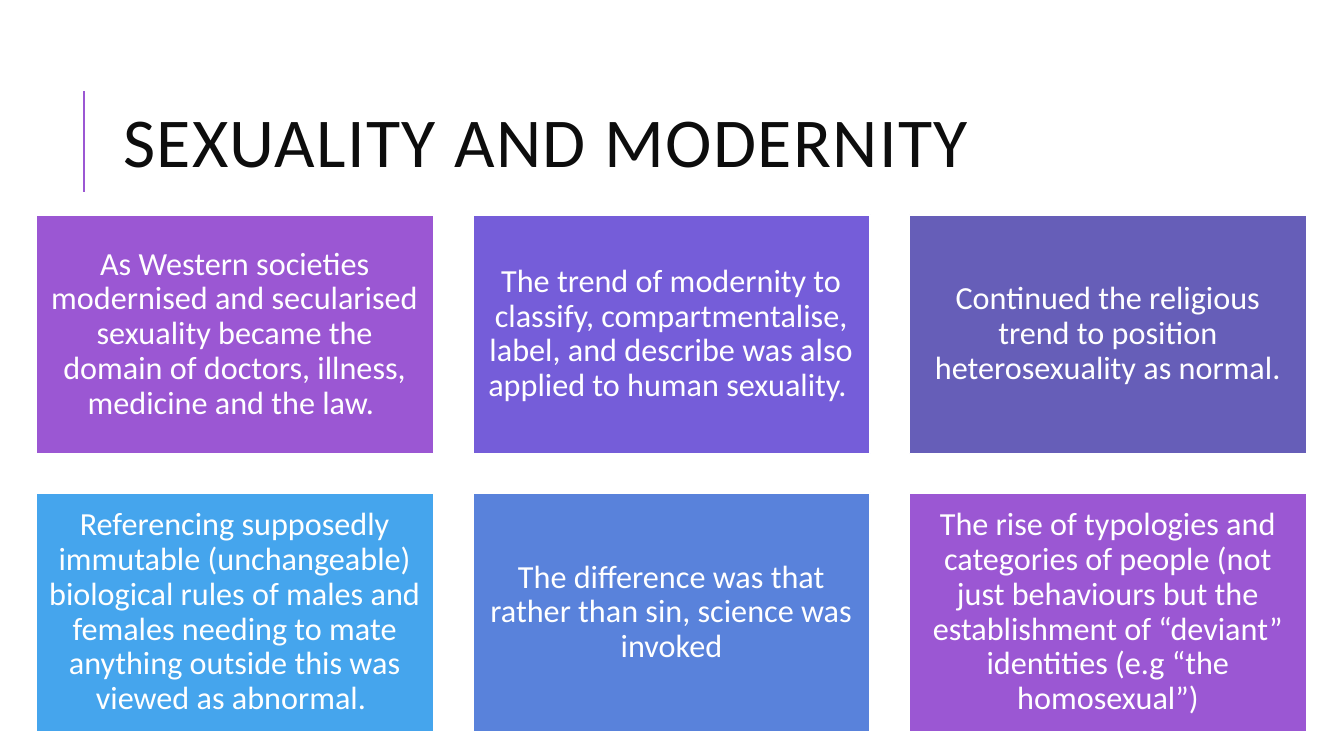
from lxml.etree import SubElement
from pptx import Presentation
from pptx.dml.color import RGBColor
from pptx.enum.shapes import MSO_CONNECTOR, MSO_SHAPE
from pptx.enum.text import MSO_ANCHOR, MSO_AUTO_SIZE, PP_ALIGN
from pptx.oxml.ns import qn
from pptx.util import Pt

PX = 9144
COLOURS = {
    "purple": "9B57D3",
    "violet": "755DD9",
    "indigo": "665EB8",
    "sky": "45A5ED",
    "blue": "5982DB",
    "white": "FFFFFF",
    "ink": "0D0D0D",
}
CARDS = [
    ("purple", "As Western societies modernised and secularised sexuality became the domain of doctors, illness, medicine and the law. "),
    ("violet", "The trend of modernity to classify, compartmentalise, label, and describe was also applied to human sexuality. "),
    ("indigo", "Continued the religious trend to position heterosexuality as normal."),
    ("sky", "Referencing supposedly immutable (unchangeable) biological rules of males and females needing to mate anything outside this was viewed as abnormal. "),
    ("blue", "The difference was that rather than sin, science was invoked"),
    ("purple", "The rise of typologies and categories of people (not just behaviours but the establishment of “deviant” identities (e.g “the homosexual”)"),
]
COLUMNS = 3
CARD_LEFT, CARD_TOP = 36, 213
CARD_WIDTH, CARD_HEIGHT = 394, 237
COLUMN_STEP, ROW_STEP = 433, 276
FRAME_FORMAT = {
    "word_wrap": True,
    "auto_size": MSO_AUTO_SIZE.NONE,
    "vertical_anchor": MSO_ANCHOR.MIDDLE,
    "margin_left": 10 * PX,
    "margin_right": 10 * PX,
    "margin_top": 10 * PX,
    "margin_bottom": 10 * PX,
}
TITLE_FORMAT = {"alignment": PP_ALIGN.LEFT, "line_spacing": 0.8}
CARD_FORMAT = {"alignment": PP_ALIGN.CENTER, "line_spacing": 0.9}


def colour(name):
    """Return the named colour."""
    return RGBColor.from_string(COLOURS[name])


def apply_format(target, values):
    """Set each attribute of a format on the target."""
    for name, value in values.items():
        setattr(target, name, value)


def write_text(shape, text, size, ink, para_format):
    """Fill a shape with one formatted paragraph and return its span."""
    apply_format(shape.text_frame, FRAME_FORMAT)
    para = shape.text_frame.paragraphs[0]
    apply_format(para, para_format)
    span = para.add_run()
    span.text = text
    apply_format(span.font, {"name": "Calibri", "size": Pt(size)})
    span.font.color.rgb = colour(ink)
    return span


def add_title(page, text):
    """Place the slide title with slightly spaced letters."""
    title = page.shapes.title
    place = {"left": 112, "top": 64, "width": 1063, "height": 164}
    apply_format(title, {name: length * PX for name, length in place.items()})
    span = write_text(title, text, 50, "ink", TITLE_FORMAT)
    span.font._element.set("spc", "100")


def add_accent_line(page, x, top, bottom):
    """Draw the upright line beside the title."""
    accent = page.shapes.add_connector(
        MSO_CONNECTOR.STRAIGHT, x * PX, bottom * PX, x * PX, top * PX
    )
    accent.line.color.rgb = colour("purple")
    accent.line.width = Pt(1.5)
    SubElement(accent._element.spPr, qn("a:effectLst"))


def add_card(page, left, top, fill, text):
    """Draw one coloured card with centred text."""
    card = page.shapes.add_shape(
        MSO_SHAPE.RECTANGLE, left * PX, top * PX, CARD_WIDTH * PX, CARD_HEIGHT * PX
    )
    card.shadow.inherit = False
    card.fill.solid()
    card.fill.fore_color.rgb = colour(fill)
    card.line.color.rgb = colour("white")
    card.line.width = Pt(1.25)
    write_text(card, text, 23, "white", CARD_FORMAT)


def main():
    """Build and save the slide."""
    deck = Presentation()
    apply_format(deck, {"slide_width": 1333 * PX, "slide_height": 750 * PX})
    page = deck.slides.add_slide(deck.slide_layouts[5])
    add_accent_line(page, 83, 90, 190)
    add_title(page, "SEXUALITY AND MODERNITY")
    for index, (fill, text) in enumerate(CARDS):
        row, column = divmod(index, COLUMNS)
        left = CARD_LEFT + column * COLUMN_STEP
        top = CARD_TOP + row * ROW_STEP
        add_card(page, left, top, fill, text)
    deck.save("out.pptx")


if __name__ == "__main__":
    main()
